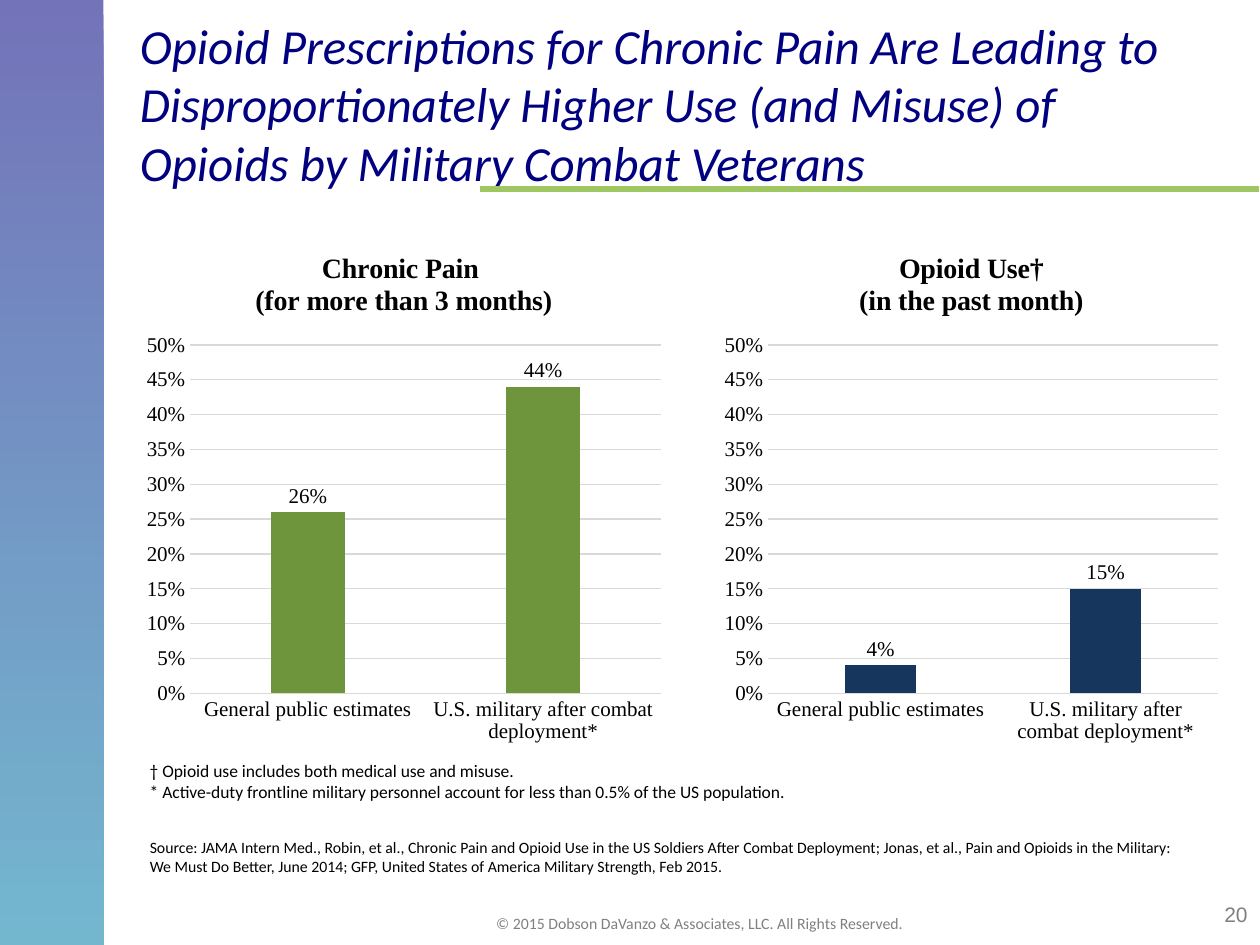
from dataclasses import dataclass

from lxml import etree
from pptx import Presentation
from pptx import util as u
from pptx.chart.data import CategoryChartData
from pptx.dml.color import RGBColor
from pptx.enum import chart as charts, shapes, text
from pptx.oxml.ns import qn


@dataclass(frozen=True)
class Theme:
    navy: str = "000080"
    teal: str = "007DA8"
    lime: str = "9FC761"
    green: str = "6E953B"
    blue: str = "17365D"
    grey: str = "808080"
    rule: str = "D9D9D9"
    black: str = "000000"
    body: str = "Calibri"
    number: str = "Arial"
    serif: str = "Times New Roman"
    title_size: int = 28
    chart_title_size: int = 16
    chart_size: int = 12
    number_size: int = 12
    note_size: int = 10
    small_size: int = 9


class SlideBuilder:
    columns, rows = 100, 75

    def __init__(self, deck, theme):
        self.theme = theme
        self.cell_width = deck.slide_width / self.columns
        self.cell_height = deck.slide_height / self.rows
        self.page = deck.slides.add_slide(deck.slide_layouts[5])

    def place(self, left, top, width, height):
        return (
            int(left * self.cell_width),
            int(top * self.cell_height),
            int(width * self.cell_width),
            int(height * self.cell_height),
        )

    def style(self, font, size, color, name, bold=False, italic=False):
        font.size = u.Pt(size)
        font.name = name
        font.bold = bold
        font.italic = italic
        font.color.rgb = RGBColor.from_string(color)

    def title(self, area, words):
        box = self.page.shapes.title
        box.left, box.top, box.width, box.height = self.place(*area)
        frame = box.text_frame
        frame.text = words
        frame.auto_size = text.MSO_AUTO_SIZE.NONE
        frame.vertical_anchor = text.MSO_ANCHOR.MIDDLE
        para = frame.paragraphs[0]
        para.alignment = text.PP_ALIGN.LEFT
        self.style(para.font, self.theme.title_size, self.theme.navy,
                   self.theme.body, italic=True)

    def text(self, area, lines, size, color, name=None, align=text.PP_ALIGN.LEFT):
        box = self.page.shapes.add_textbox(*self.place(*area))
        frame = box.text_frame
        frame.word_wrap = True
        frame.text = "\n".join(lines)
        for para in frame.paragraphs:
            para.alignment = align
            self.style(para.font, size, color, name or self.theme.body)

    def side_band(self, area, colors, opacity):
        band = self.page.shapes.add_shape(
            shapes.MSO_SHAPE.RECTANGLE, *self.place(*area))
        band.shadow.inherit = False
        band.line.fill.background()
        band.fill.gradient()
        band.fill.gradient_angle = 270
        for stop, color in zip(band.fill.gradient_stops, colors):
            stop.color.rgb = RGBColor.from_string(color)
        for color in band._element.spPr.iter(qn("a:srgbClr")):
            etree.SubElement(color, qn("a:alpha"), val=str(opacity * 1000))

    def rule(self, left, right, top, color, weight):
        x, y, width, _ = self.place(left, top, right - left, 0)
        line = self.page.shapes.add_connector(
            shapes.MSO_CONNECTOR.STRAIGHT, x, y, x + width, y)
        line.line.color.rgb = RGBColor.from_string(color)
        line.line.width = u.Pt(weight)
        etree.SubElement(line._element.spPr, qn("a:effectLst"))

    def column_chart(self, area, heading, categories, values, color):
        theme = self.theme
        data = CategoryChartData(number_format="0%")
        data.categories = categories
        data.add_series("Series 1", values)
        chart = self.page.shapes.add_chart(
            charts.XL_CHART_TYPE.COLUMN_CLUSTERED, *self.place(*area), data).chart
        self.style(chart.font, theme.chart_size, theme.black, theme.serif)
        chart.has_legend = False
        chart.has_title = True
        chart.chart_title.include_in_layout = False
        frame = chart.chart_title.text_frame
        frame.text = "\n".join(heading)
        for para in frame.paragraphs:
            self.style(para.font, theme.chart_title_size, theme.black,
                       theme.serif, bold=True)

        rule_color = RGBColor.from_string(theme.rule)
        value_axis, category_axis = chart.value_axis, chart.category_axis
        value_axis.minimum_scale, value_axis.maximum_scale = 0, 0.5
        value_axis.major_unit = 0.05
        value_axis.tick_labels.number_format = "0%"
        value_axis.tick_labels.number_format_is_linked = False
        value_axis.format.line.fill.background()
        for line in (value_axis.major_gridlines.format.line,
                     category_axis.format.line):
            line.color.rgb = rule_color
            line.width = u.Pt(0.75)
        for axis in (value_axis, category_axis):
            axis.major_tick_mark = charts.XL_TICK_MARK.NONE
            axis.minor_tick_mark = charts.XL_TICK_MARK.NONE
            self.style(axis.tick_labels.font, theme.chart_size, theme.black,
                       theme.serif)

        plot = chart.plots[0]
        plot.vary_by_categories = False
        plot.gap_width, plot.overlap = 219, -27
        fill = plot.series[0].format.fill
        fill.solid()
        fill.fore_color.rgb = RGBColor.from_string(color)
        plot.has_data_labels = True
        labels = plot.data_labels
        labels.show_value = True
        labels.number_format = "0%"
        labels.number_format_is_linked = False
        labels.position = charts.XL_LABEL_POSITION.OUTSIDE_END
        self.style(labels.font, theme.chart_size, theme.black, theme.serif)


def main():
    deck = Presentation()
    deck.slide_width, deck.slide_height = u.Inches(10), u.Inches(7.5)
    theme = Theme()
    slide = SlideBuilder(deck, theme)

    slide.rule(38.1, 99.9, 15, theme.lime, 3)
    slide.side_band((0, 0, 8.2, 75), (theme.navy, theme.teal), 55)
    slide.title(
        (10.1, 0.8, 85.9, 14.8),
        "Opioid Prescriptions for Chronic Pain Are Leading to Disproportionately "
        "Higher Use (and Misuse) of Opioids by Military Combat Veterans")

    groups = ("General public estimates", "U.S. military after combat deployment*")
    slide.column_chart((10.8, 18.3, 42.5, 41.5),
                       ("Chronic Pain ", "(for more than 3 months)"),
                       groups, (0.26, 0.44), theme.green)
    slide.column_chart((56.7, 18.3, 40.8, 41.5),
                       ("Opioid Use†", "(in the past month)"),
                       groups, (0.04, 0.15), theme.blue)

    slide.text((10.9, 59.8, 86.6, 4.4), (
        "† Opioid use includes both medical use and misuse.",
        "* Active-duty frontline military personnel account for less than 0.5% "
        "of the US population.",
    ), theme.note_size, theme.black)
    slide.text((10.9, 66, 84.5, 4), (
        "Source: JAMA Intern Med., Robin, et al., Chronic Pain and Opioid Use in "
        "the US Soldiers After Combat Deployment; Jonas, et al., Pain and Opioids "
        "in the Military: We Must Do Better, June 2014; GFP, United States of "
        "America Military Strength, Feb 2015.",
    ), theme.small_size, theme.black)
    slide.text((34.1, 72, 42.8, 2.1), (
        "© 2015 Dobson DaVanzo & Associates, LLC. All Rights Reserved.",
    ), theme.small_size, theme.grey, align=text.PP_ALIGN.CENTER)
    slide.text((89.2, 71.1, 10.8, 3), ("20",), theme.number_size, theme.grey,
               theme.number, text.PP_ALIGN.RIGHT)

    deck.save("out.pptx")


if __name__ == "__main__":
    main()
